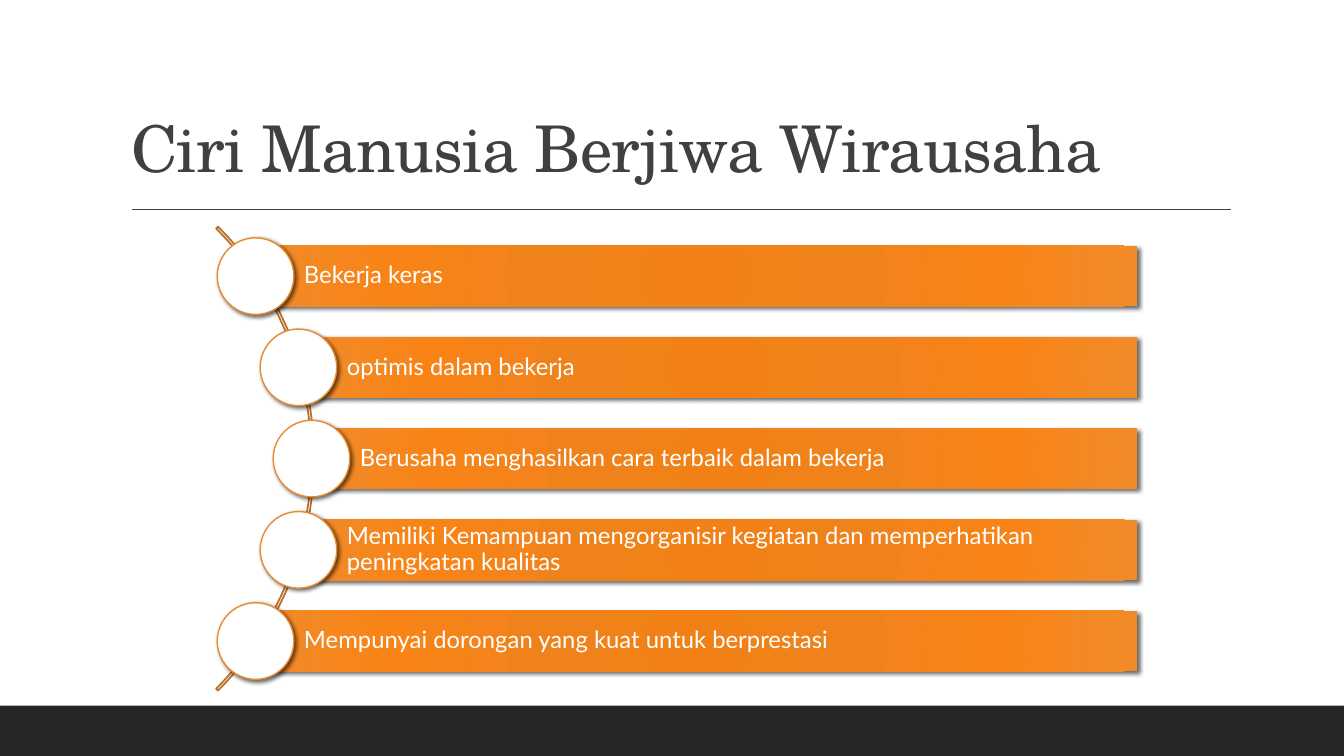
import math

import lxml.etree
import pptx
import pptx.dml.color
import pptx.enum.shapes
import pptx.enum.text
import pptx.oxml
import pptx.oxml.ns
import pptx.util

Inches = pptx.util.Inches
Pt = pptx.util.Pt
RGBColor = pptx.dml.color.RGBColor
MSO_SHAPE = pptx.enum.shapes.MSO_SHAPE
MSO_ANCHOR = pptx.enum.text.MSO_ANCHOR
PP_ALIGN = pptx.enum.text.PP_ALIGN
qn = pptx.oxml.ns.qn

WHITE = RGBColor(0xFF, 0xFF, 0xFF)
DARK = RGBColor(0x26, 0x26, 0x26)
GREY = RGBColor(0x40, 0x40, 0x40)
ORANGE = RGBColor(0xE8, 0x8B, 0x33)
BROWN = RGBColor(0xBA, 0x6F, 0x29)
BAR_STOPS = [(0, "F18116"), (34, "F0821B"), (70, "F88417"), (100, "F18B2A")]

TRAITS = [
    "Bekerja keras",
    "optimis dalam bekerja",
    "Berusaha menghasilkan cara terbaik dalam bekerja",
    "Memiliki Kemampuan mengorganisir kegiatan dan memperhatikan peningkatan kualitas",
    "Mempunyai dorongan yang kuat untuk berprestasi",
]
ARC_X, ARC_Y, ARC_SIZE = -0.14, 4.55, 6.51
CURVE_RADIUS = 3.23
ROW_STEP = 0.905
BAR_RIGHT, BAR_HEIGHT = 11.28, 0.6
CIRCLE_SIZE = 0.76


class SlideBuilder:
    """Holds the style and the current slide and draws each kind of element."""

    title_font = "TeX Gyre Schola"
    body_font = "Lato"

    def __init__(self, presentation):
        self.slide = presentation.slides.add_slide(presentation.slide_layouts[5])

    def title(self, text, left, top, width, height):
        shape = self.slide.shapes.title
        shape.left, shape.top = Inches(left), Inches(top)
        shape.width, shape.height = Inches(width), Inches(height)
        frame = shape.text_frame
        frame.text = text
        frame.auto_size = pptx.enum.text.MSO_AUTO_SIZE.NONE
        frame.vertical_anchor = MSO_ANCHOR.BOTTOM
        paragraph = frame.paragraphs[0]
        paragraph.alignment = PP_ALIGN.LEFT
        self.format_text(paragraph, self.title_font, 46, GREY)
        paragraph.runs[0].font._element.set("spc", "-50")

    def format_text(self, paragraph, font_name, size, color):
        paragraph.line_spacing = 0.9
        paragraph.font.name = font_name
        paragraph.font.size = Pt(size)
        paragraph.font.color.rgb = color

    def shape(self, kind, left, top, width, height, fill=None, line=None, line_width=1):
        shape = self.slide.shapes.add_shape(
            kind, Inches(left), Inches(top), Inches(width), Inches(height))
        shape.shadow.inherit = False
        if fill is None:
            shape.fill.background()
        else:
            shape.fill.solid()
            shape.fill.fore_color.rgb = fill
        if line is None:
            shape.line.fill.background()
        else:
            shape.line.color.rgb = line
            shape.line.width = Pt(line_width)
        return shape

    def rule(self, left, right, y):
        connector = self.slide.shapes.add_connector(
            pptx.enum.shapes.MSO_CONNECTOR.STRAIGHT,
            Inches(left), Inches(y), Inches(right), Inches(y))
        connector.line.color.rgb = GREY
        connector.line.width = Pt(1)
        lxml.etree.SubElement(connector._element.spPr, qn("a:effectLst"))

    def arc(self, center_x, center_y, size):
        arc = self.shape(MSO_SHAPE.BLOCK_ARC, center_x - size / 2, center_y - size / 2,
                         size, size, line=BROWN, line_width=1.25)
        for index, value in enumerate((189, 27, 0.004)):
            arc.adjustments[index] = value

    def bar(self, text, left, center_y):
        bar = self.shape(MSO_SHAPE.RECTANGLE, left, center_y - BAR_HEIGHT / 2,
                         BAR_RIGHT - left, BAR_HEIGHT)
        self.add_gradient(bar)
        self.add_shadow(bar)
        frame = bar.text_frame
        frame.word_wrap = True
        frame.vertical_anchor = MSO_ANCHOR.MIDDLE
        frame.margin_left = Inches(0.48)
        frame.margin_right = frame.margin_top = frame.margin_bottom = Inches(0.05)
        frame.text = text
        paragraph = frame.paragraphs[0]
        paragraph.alignment = PP_ALIGN.LEFT
        self.format_text(paragraph, self.body_font, 17, WHITE)

    def circle(self, center_x, center_y):
        circle = self.shape(MSO_SHAPE.OVAL, center_x - CIRCLE_SIZE / 2,
                            center_y - CIRCLE_SIZE / 2, CIRCLE_SIZE, CIRCLE_SIZE,
                            WHITE, ORANGE)
        self.add_shadow(circle)

    def add_gradient(self, shape):
        stops = "".join(
            f'<a:gs pos="{position * 1000}"><a:srgbClr val="{color}"/></a:gs>'
            for position, color in BAR_STOPS)
        gradient = pptx.oxml.parse_xml(
            f'<a:gradFill {pptx.oxml.ns.nsdecls("a")} rotWithShape="1">'
            f'<a:gsLst>{stops}</a:gsLst><a:path path="circle">'
            '<a:fillToRect l="100000" t="100000" r="100000" b="100000"/>'
            '</a:path></a:gradFill>')
        properties = shape._element.spPr
        properties.replace(properties.find(qn("a:noFill")), gradient)

    def add_shadow(self, shape):
        effects = shape._element.spPr.find(qn("a:effectLst"))
        shadow = lxml.etree.SubElement(
            effects, qn("a:outerShdw"), blurRad=str(Pt(3)), dist=str(Pt(2)),
            dir="2700000", algn="ctr", rotWithShape="0")
        color = lxml.etree.SubElement(shadow, qn("a:srgbClr"), val="000000")
        lxml.etree.SubElement(color, qn("a:alpha"), val="60000")


def main():
    presentation = pptx.Presentation()
    presentation.slide_width = Inches(13.33)
    presentation.slide_height = Inches(7.5)
    builder = SlideBuilder(presentation)
    builder.shape(MSO_SHAPE.RECTANGLE, 0, 7, 13.33, 0.5, DARK)
    builder.rule(1.31, 12.21, 2.08)
    builder.title("Ciri Manusia Berjiwa Wirausaha", 1.2, 0.31, 11, 1.59)
    builder.arc(ARC_X, ARC_Y, ARC_SIZE)
    for index, trait in enumerate(TRAITS):
        offset = (index - len(TRAITS) // 2) * ROW_STEP
        x = ARC_X + math.sqrt(CURVE_RADIUS ** 2 - offset ** 2)
        builder.bar(trait, x, ARC_Y + offset)
        builder.circle(x, ARC_Y + offset)
    presentation.save("out.pptx")


if __name__ == "__main__":
    main()
